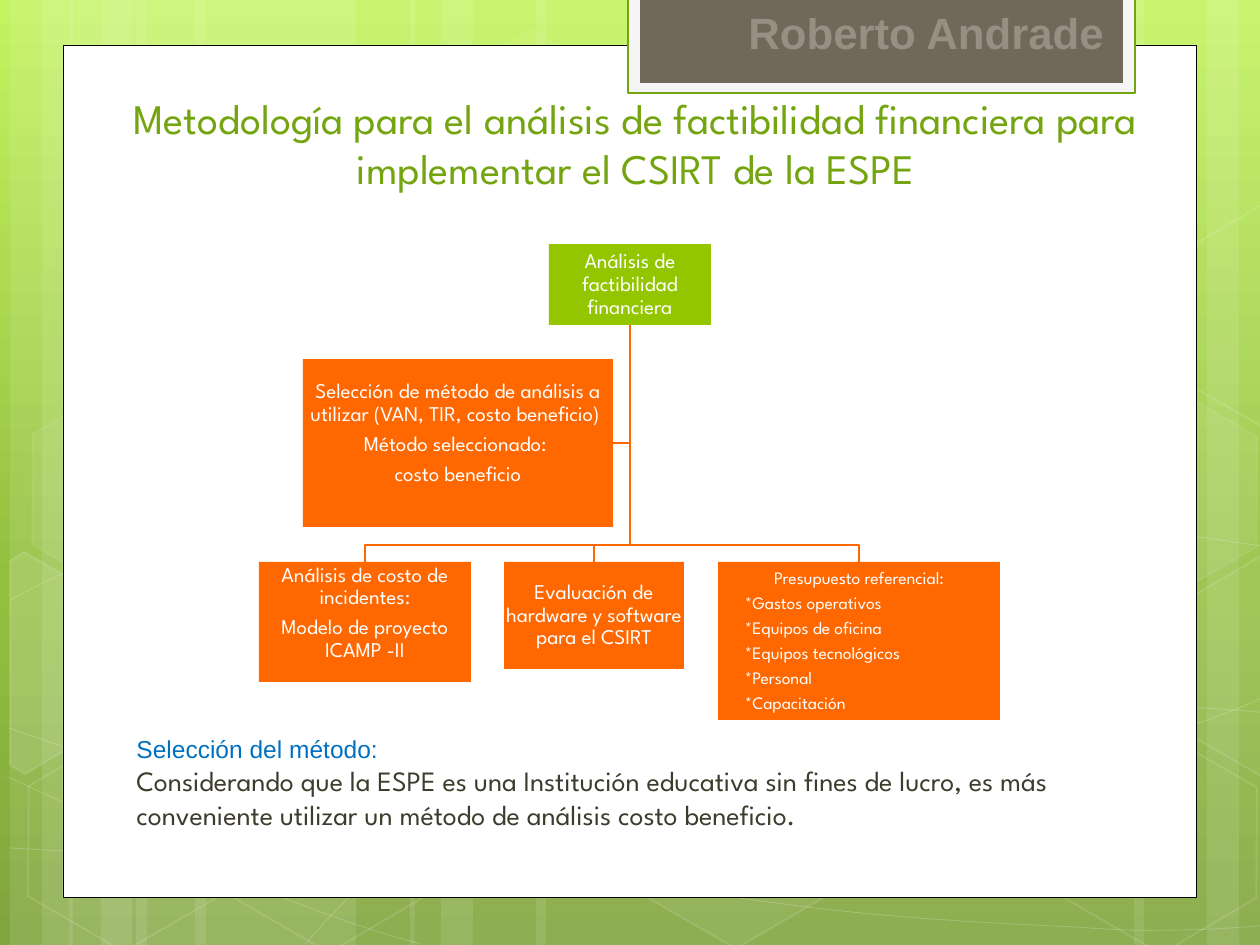
from copy import deepcopy

from lxml.etree import SubElement
from pptx import Presentation
from pptx.dml.color import RGBColor
from pptx.enum.shapes import MSO_SHAPE
from pptx.enum.text import MSO_ANCHOR, MSO_AUTO_SIZE, PP_ALIGN
from pptx.oxml.ns import qn
from pptx.util import Emu, Pt

EMU_PER_PX = 914400 / 126
W, H = 1260, 945

WHITE = RGBColor(0xFF, 0xFF, 0xFF)
BLACK = RGBColor(0, 0, 0)
GREEN = RGBColor(0x94, 0xC6, 0x00)
DARK_GREEN = RGBColor(0x74, 0xA5, 0x10)
ORANGE = RGBColor(0xFF, 0x67, 0x00)
BLUE = RGBColor(0x00, 0x70, 0xC0)
INK = RGBColor(0x3E, 0x3D, 0x2D)
PALE = RGBColor(0xF5, 0xF5, 0xF5)
BROWN = RGBColor(0x71, 0x68, 0x5A)
SKY = [(0, RGBColor(0xC3, 0xF3, 0x5F)), (0.62, RGBColor(0x93, 0xBF, 0x3F)),
       (1, RGBColor(0x81, 0xA5, 0x3E))]
FONT = "League Spartan"

# left, width of the pale vertical bands
BANDS = [(136, 220), (10, 63), (42, 105), (195, 220), (69, 63), (101, 105),
         (924, 220), (1207, 63), (1134, 105), (536, 388), (410, 63), (441, 105)]
# start point, then three points (two controls and an end) for each Bézier segment
CURVES = [
    [(9, 848), (77, 852), (144, 855), (239, 854), (334, 853), (451, 851), (577, 838),
     (703, 825), (882, 801), (998, 777), (1113, 753), (1231, 716), (1269, 694)],
    [(9, 601), (45, 581), (82, 562), (152, 543), (224, 521), (326, 496), (437, 488),
     (551, 479), (685, 478), (824, 488), (963, 498), (1193, 537), (1269, 547)],
    [(8, 777), (160, 847), (311, 916), (421, 944)],
    [(9, 728), (48, 742), (88, 756), (161, 776), (234, 795), (344, 827), (450, 848),
     (554, 869), (687, 892), (791, 905), (896, 919), (1008, 924), (1075, 927),
     (1140, 932), (1158, 930), (1191, 930), (1223, 929), (1246, 927), (1269, 925)],
    [(305, 944), (328, 919), (350, 893), (381, 871), (411, 848), (454, 823), (489, 805),
     (524, 787), (546, 780), (592, 767), (638, 755), (722, 737), (766, 728),
     (811, 719), (818, 719), (857, 717), (896, 713), (958, 709), (1000, 708),
     (1044, 707), (1116, 708), (1116, 708), (1144, 708), (1173, 708), (1201, 708),
     (1223, 709), (1245, 711), (1256, 712), (1267, 713), (1264, 712), (1268, 713)],
]
# left, top, fill opacity, line opacity
HEXAGONS = [(421, 45, 4, 8), (626, 742, 6, 12), (14, 745, 0, 12), (18, 393, 7, 8),
            (219, 746, 0, 12), (949, 571, 10, 12), (1051, 747, 0, 12), (1051, 396, 7, 8)]
# corners and fill opacity of the hexagons cut by the slide edge
CUT_HEXAGONS = [
    ([(10, 561), (24, 552), (121, 607), (120, 718), (25, 774), (10, 765)], 10),
    ([(1167, 611), (1261, 556), (1271, 562), (1271, 772), (1263, 777), (1167, 722)], 4),
    ([(1167, 261), (1261, 205), (1273, 212), (1271, 422), (1263, 427), (1167, 372)], 0),
]


def px(n):
    return Emu(round(n * EMU_PER_PX))


def fade(parent, percent):
    """Make the solid fill held by an XML element see-through."""
    color = parent.find(qn("a:solidFill"))[0]
    SubElement(color, qn("a:alpha")).set("val", str(percent * 1000))


def paint(sp, fill=None, line=None, width=1, fill_alpha=100, line_alpha=100):
    sp.shadow.inherit = False
    spPr = sp._element.spPr
    if fill is None or not fill_alpha:
        sp.fill.background()
    else:
        sp.fill.solid()
        sp.fill.fore_color.rgb = fill
        if fill_alpha < 100:
            fade(spPr, fill_alpha)
    if line is None:
        sp.line.fill.background()
    else:
        sp.line.color.rgb = line
        sp.line.width = Pt(width)
        if line_alpha < 100:
            fade(spPr.find(qn("a:ln")), line_alpha)


def add_box(s, box, kind=MSO_SHAPE.RECTANGLE, **look):
    sp = s.shapes.add_shape(kind, *map(px, box))
    paint(sp, **look)
    return sp


def add_path(s, points, close=False, **look):
    builder = s.shapes.build_freeform(*points[0], scale=EMU_PER_PX)
    builder.add_line_segments(points[1:], close=close)
    sp = builder.convert_to_shape()
    paint(sp, **look)
    return sp


def add_curve(s, points, **look):
    """Path whose straight segments are joined by threes into Bézier segments."""
    outline = add_path(s, points, **look)._element.find(".//" + qn("a:path"))
    segments = outline.findall(qn("a:lnTo"))
    for i in range(0, len(segments), 3):
        bezier = SubElement(outline, qn("a:cubicBezTo"))
        for segment in segments[i:i + 3]:
            bezier.append(segment[0])
            outline.remove(segment)


def write(p, text, size, color, font=FONT, align=PP_ALIGN.LEFT):
    p.text = text
    p.alignment = align
    f = p.runs[0].font
    f.name, f.size, f.color.rgb = font, Pt(size), color


def add_background(s):
    fill = s.background.fill
    fill.gradient()
    fill.gradient_angle = 270
    stops = s.element.find(".//" + qn("a:gsLst"))
    stops.append(deepcopy(stops[0]))
    for stop, (position, color) in zip(fill.gradient_stops, SKY):
        stop.position = position
        stop.color.rgb = color
    for x, w in BANDS:
        add_box(s, (x, 0, w, H), fill=WHITE, fill_alpha=10)
    for curve in CURVES:
        add_curve(s, curve, line=WHITE, width=0.5, line_alpha=20)
    for x, y, fill_alpha, line_alpha in HEXAGONS:
        sp = add_box(s, (x, y, 220, 192), MSO_SHAPE.HEXAGON, fill=WHITE, line=WHITE,
                     fill_alpha=fill_alpha, line_alpha=line_alpha)
        sp.adjustments[0] = 0.285
        sp.rotation = 30
    for corners, fill_alpha in CUT_HEXAGONS:
        add_path(s, corners, close=True, fill=WHITE, line=WHITE,
                 fill_alpha=fill_alpha, line_alpha=12)


def add_name_tab(s, x, y, w, h):
    add_box(s, (x, y, w, h), fill=PALE, line=DARK_GREEN, width=1.25)
    add_box(s, (x + 12, y, w - 24, h - 10), fill=BROWN)
    tb = s.shapes.add_textbox(px(x + 22), px(0), px(w - 41), px(66))
    tb.text_frame.word_wrap = True
    p = tb.text_frame.paragraphs[0]
    write(p, "Roberto Andrade", 25, WHITE, "Arial", PP_ALIGN.RIGHT)
    p.runs[0].font.bold = True
    fade(p.runs[0].font._element, 25)


def add_title(s, *box):
    title = s.shapes.title
    title.left, title.top, title.width, title.height = map(px, box)
    tf = title.text_frame
    tf.word_wrap, tf.auto_size, tf.vertical_anchor = True, MSO_AUTO_SIZE.NONE, MSO_ANCHOR.TOP
    write(tf.paragraphs[0], "Metodología para el análisis de factibilidad financiera "
          "para implementar el CSIRT de la ESPE", 24, DARK_GREEN, align=PP_ALIGN.CENTER)
    title._element.getparent().append(title._element)


def add_node(s, box, lines, fill=ORANGE, size=12, bottom=1, list_indent=None):
    """Filled box; with list_indent, lines after the first form a list."""
    tf = add_box(s, box, fill=fill).text_frame
    tf.word_wrap, tf.vertical_anchor = True, MSO_ANCHOR.MIDDLE
    tf.margin_left = tf.margin_right = tf.margin_top = px(1)
    tf.margin_bottom = px(bottom)
    for i, text in enumerate(lines):
        p = tf.add_paragraph() if i else tf.paragraphs[0]
        listed = i and list_indent
        write(p, text, size, WHITE, align=PP_ALIGN.LEFT if listed else PP_ALIGN.CENTER)
        p.line_spacing, p.space_after = 0.9, Pt(size * 0.35)
        if listed:
            p._p.get_or_add_pPr().set("marL", str(px(list_indent)))


def add_org_chart(s, x, y):
    trunk, top, bus, row = x + 371, y + 81, y + 301, y + 318
    steps = [
        (0, 212, 120, ["Análisis de costo de incidentes:", "Modelo de proyecto ICAMP -II"],
         dict(bottom=19)),
        (245, 180, 107, ["Evaluación de hardware y software para el CSIRT"], {}),
        (459, 282, 158, ["Presupuesto referencial:", "*Gastos operativos",
                         "*Equipos de oficina", "*Equipos tecnológicos", "*Personal",
                         "*Capacitación"], dict(size=10, list_indent=26)),
    ]
    branches = [[(trunk, y + 199), (x + 354, y + 199)]]
    for left, w, *_ in reversed(steps):
        center = x + left + w // 2
        branches.append([(trunk, bus), (center, bus), (center, row)])
    for branch in branches:
        add_path(s, [(trunk, top)] + branch, line=ORANGE, width=1.25)

    add_node(s, (x + 290, y, 162, 81), ["Análisis de factibilidad financiera"], GREEN)
    for left, w, h, lines, options in steps:
        add_node(s, (x + left, row, w, h), lines, **options)
    add_node(s, (x + 44, y + 115, 310, 168), [
        "Selección de método de análisis a utilizar (VAN, TIR, costo beneficio) ",
        "Método seleccionado: ", "costo beneficio"], bottom=21)


def add_conclusion(s, *box):
    tf = s.shapes.add_textbox(*map(px, box)).text_frame
    tf.word_wrap = True
    write(tf.paragraphs[0], "Selección del método:", 14, BLUE, "Arial")
    write(tf.add_paragraph(), "Considerando que la ESPE es una Institución educativa sin "
          "fines de lucro, es más conveniente utilizar un método de análisis costo "
          "beneficio.", 16, INK)


def main():
    prs = Presentation()
    prs.slide_width, prs.slide_height = px(W), px(H)
    s = prs.slides.add_slide(prs.slide_layouts[5])
    add_background(s)
    add_box(s, (63, 45, 1134, 853), fill=WHITE, line=BLACK, width=0.5)
    add_name_tab(s, 628, -3, 507, 96)
    add_title(s, 95, 86, 1081, 115)
    add_conclusion(s, 124, 728, 1012, 140)
    add_org_chart(s, 259, 244)
    prs.save("out.pptx")


if __name__ == "__main__":
    main()
